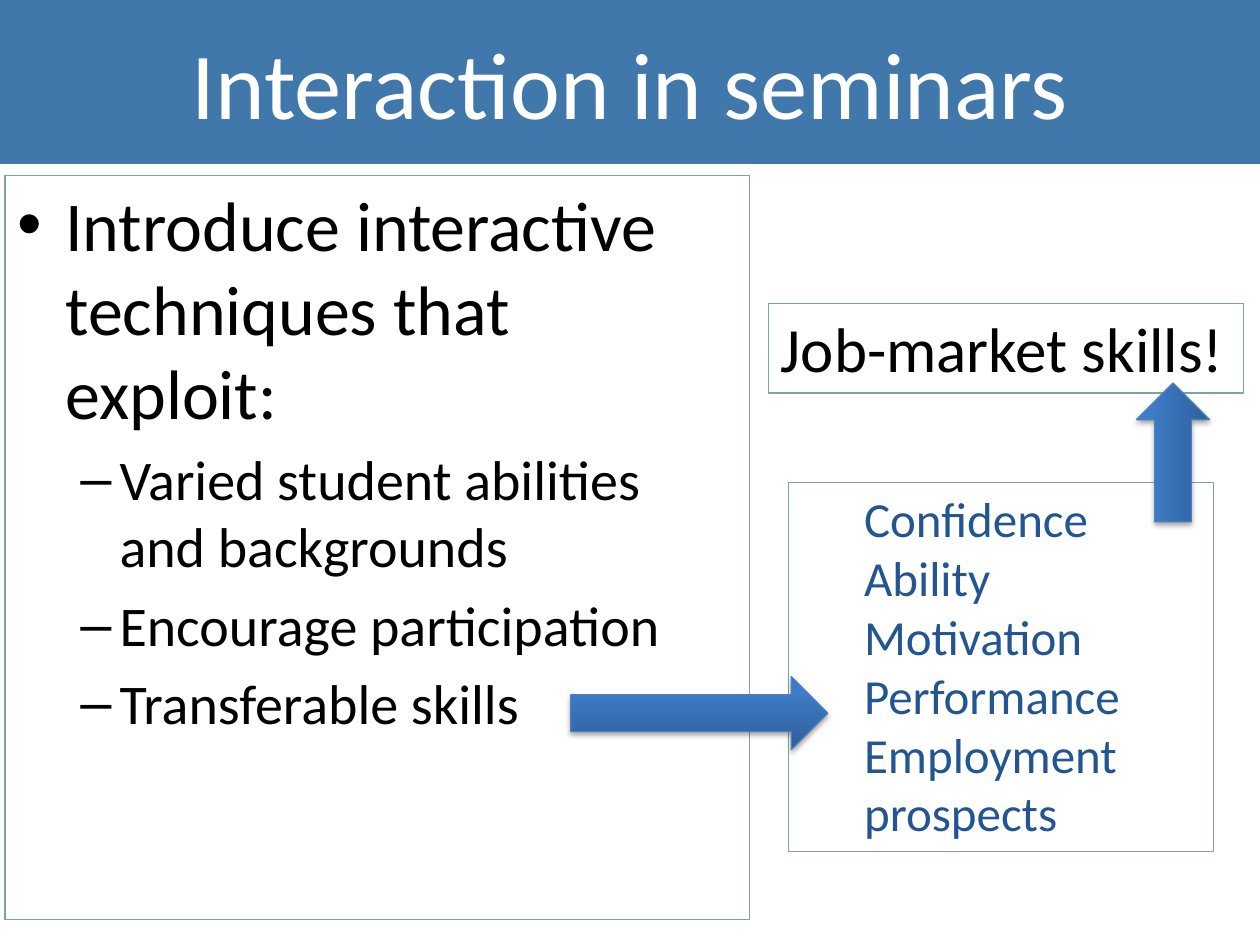
"""Build the slide on interaction in seminars."""
from copy import deepcopy
from dataclasses import dataclass

from lxml.etree import SubElement
from pptx import Presentation
from pptx.dml.color import RGBColor
from pptx.enum.shapes import MSO_SHAPE
from pptx.enum.text import MSO_ANCHOR, MSO_AUTO_SIZE, PP_ALIGN
from pptx.oxml.ns import qn
from pptx.util import Inches, Pt

TITLE = "Interaction in seminars"
BODY = [
    (0, "Introduce interactive techniques that exploit:"),
    (1, "Varied student abilities and backgrounds"),
    (1, "Encourage participation"),
    (1, "Transferable skills"),
]
GAINS = ["Confidence", "Ability", "Motivation", "Performance", "Employment prospects"]
GOAL = "Job-market skills!"
LEVELS = [("•", 0.38, -0.38), ("–", 0.81, -0.31)]
ARROWS = {
    "skills": (4.53, 5.37, 2.04, 0.58, 0),
    "market": (8.76, 3.3, 1.1, 0.58, 270),
}


@dataclass(frozen=True)
class Theme:
    font: str = "Calibri"
    band: str = "4078AB"
    white: str = "FFFFFF"
    ink: str = "000000"
    blue: str = "235591"
    frame: str = "7FA1AC"
    edge: str = "4B7EBC"
    shade: tuple = ((0, "2F5F99"), (0.8, "3D7CC7"), (1, "3A7CCB"))
    title: int = 54
    body: tuple = (40, 32)
    gain: int = 28
    goal: int = 36
    line: float = 0.75


THEME = Theme()


def color(code):
    return RGBColor.from_string(code)


def outline(shape, code):
    shape.line.color.rgb = color(code)
    shape.line.width = Pt(THEME.line)


def add_box(slide, area, framed=True, grow=False, wrap=True):
    box = slide.shapes.add_textbox(*map(Inches, area))
    frame = box.text_frame
    frame.word_wrap = wrap
    frame.auto_size = MSO_AUTO_SIZE.SHAPE_TO_FIT_TEXT if grow else MSO_AUTO_SIZE.NONE
    if framed:
        outline(box, THEME.frame)
    return box


def write(frame, lines, size, ink):
    frame.text = "\n".join(lines)
    for para in frame.paragraphs:
        para.font.name = THEME.font
        para.font.size = Pt(size)
        para.font.color.rgb = color(ink)
    return frame.paragraphs


def indent(para, left, first=0):
    props = para._p.get_or_add_pPr()
    props.set("marL", str(Inches(left)))
    props.set("indent", str(Inches(first)))
    return props


def add_title(slide):
    box = add_box(slide, (0, -0.01, 10, 1.31), framed=False)
    box.fill.solid()
    box.fill.fore_color.rgb = color(THEME.band)
    box.text_frame.vertical_anchor = MSO_ANCHOR.MIDDLE
    write(box.text_frame, [TITLE], THEME.title, THEME.white)[0].alignment = PP_ALIGN.CENTER


def add_body(slide):
    frame = add_box(slide, (0.04, 1.39, 5.91, 5.91)).text_frame
    paras = write(frame, [text for _, text in BODY], THEME.body[0], THEME.ink)
    for para, (level, _) in zip(paras, BODY):
        mark, left, first = LEVELS[level]
        size = THEME.body[level]
        para.level = level
        para.font.size = Pt(size)
        para.space_before = Pt(size * 0.2)
        props = indent(para, left, first)
        bullet = SubElement(props, qn("a:buFont"))
        bullet.set("typeface", "Arial")
        props.find(qn("a:defRPr")).addprevious(bullet)
        sign = SubElement(props, qn("a:buChar"))
        sign.set("char", mark)
        bullet.addnext(sign)


def add_gains(slide):
    frame = add_box(slide, (6.26, 3.83, 3.37, 2.93), grow=True).text_frame
    for para in write(frame, GAINS, THEME.gain, THEME.blue):
        para.level = 1
        indent(para, 0.5)


def add_goal(slide):
    box = add_box(slide, (6.1, 2.41, 3.77, 0.71), grow=True, wrap=False)
    write(box.text_frame, [GOAL], THEME.goal, THEME.ink)


def add_arrow(slide, left, top, width, height, turn):
    area = map(Inches, (left, top, width, height))
    arrow = slide.shapes.add_shape(MSO_SHAPE.RIGHT_ARROW, *area)
    arrow.rotation = turn
    arrow.fill.gradient()
    arrow.fill.gradient_angle = 90
    stops = arrow.element.spPr.find(".//" + qn("a:gsLst"))
    stops.append(deepcopy(stops[-1]))
    for stop, (place, code) in zip(arrow.fill.gradient_stops, THEME.shade):
        stop.position = place
        stop.color.rgb = color(code)
    outline(arrow, THEME.edge)


def main():
    deck = Presentation()
    deck.slide_width, deck.slide_height = Inches(10), Inches(7.5)
    slide = deck.slides.add_slide(deck.slide_layouts[6])
    add_title(slide)
    add_body(slide)
    add_gains(slide)
    add_arrow(slide, *ARROWS["skills"])
    add_goal(slide)
    add_arrow(slide, *ARROWS["market"])
    deck.save("out.pptx")


if __name__ == "__main__":
    main()
